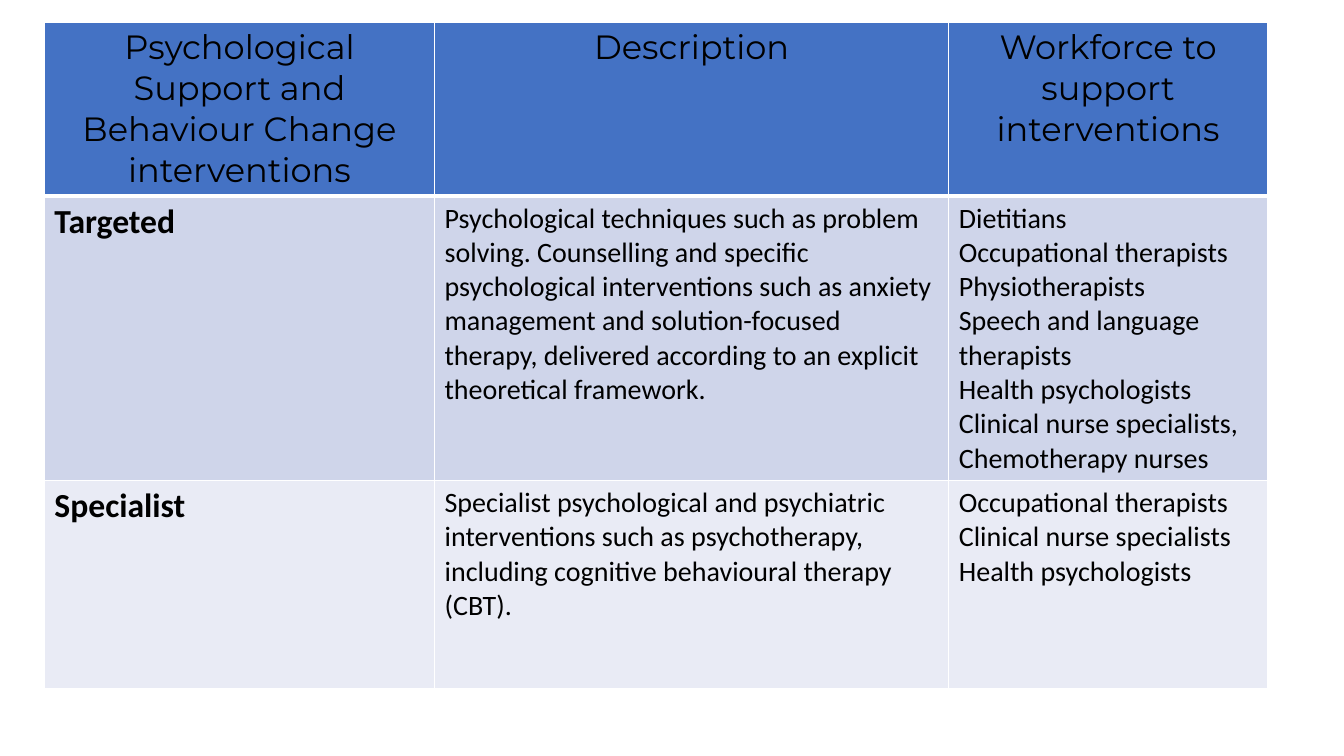
from dataclasses import dataclass

from lxml import etree
from pptx import Presentation
from pptx import util as u
from pptx.dml import color
from pptx.enum import text
from pptx.oxml import ns

PX = 9144
BLACK, WHITE = "000000", "FFFFFF"


@dataclass(frozen=True)
class Style:
    font: str
    size: int
    bold: bool = False
    align: text.PP_ALIGN = text.PP_ALIGN.LEFT


@dataclass(frozen=True)
class Row:
    height: int
    fill: str
    base: int
    styles: tuple[Style, ...]
    cells: tuple[tuple[str, ...], ...]


HEAD = Style("Montserrat", 24, align=text.PP_ALIGN.CENTER)
LEVEL = Style("Calibri", 24, bold=True)
BODY = Style("Calibri", 20)
ENTRY = (LEVEL, BODY, BODY)

WIDTHS = (387, 510, 316)
ROWS = (
    Row(172, "4472C4", 3, (HEAD,) * 3, (
        ("Psychological Support and Behaviour Change interventions",),
        ("Description",),
        ("Workforce to support interventions",),
    )),
    Row(282, "CFD5EA", 1, ENTRY, (
        ("Targeted",),
        ("Psychological techniques such as problem solving. Counselling and "
         "specific psychological interventions such as anxiety management and "
         "solution-focused therapy, delivered according to an explicit "
         "theoretical framework.",),
        ("Dietitians", "Occupational therapists", "Physiotherapists",
         "Speech and language therapists", "Health psychologists",
         "Clinical nurse specialists, Chemotherapy nurses"),
    )),
    Row(206, "E9EBF5", 1, ENTRY, (
        ("Specialist",),
        ("Specialist psychological and psychiatric interventions such as "
         "psychotherapy, including cognitive behavioural therapy (CBT).",),
        ("Occupational therapists", "Clinical nurse specialists",
         "Health psychologists"),
    )),
)


def px(count: int) -> u.Emu:
    return u.Emu(count * PX)


def rgb(code: str) -> color.RGBColor:
    return color.RGBColor.from_string(code)


def edge(cell, base: int) -> None:
    props = cell._tc.get_or_add_tcPr()
    for side, width in (("L", 1), ("R", 1), ("T", 1), ("B", base)):
        line = etree.SubElement(props, ns.qn(f"a:ln{side}"), w=str(u.Pt(width)))
        fill = etree.SubElement(line, ns.qn("a:solidFill"))
        etree.SubElement(fill, ns.qn("a:srgbClr"), val=WHITE)


def write(cell, lines: tuple[str, ...], style: Style) -> None:
    frame = cell.text_frame
    for index, words in enumerate(lines):
        para = frame.add_paragraph() if index else frame.paragraphs[0]
        para.alignment = style.align
        run = para.add_run()
        run.text = words
        run.font.name = style.font
        run.font.size = u.Pt(style.size)
        run.font.bold = style.bold
        run.font.color.rgb = rgb(BLACK)


def draw(slide) -> None:
    high = sum(row.height for row in ROWS)
    frame = slide.shapes.add_table(len(ROWS), len(WIDTHS), px(44), px(22),
                                   px(sum(WIDTHS)), px(high))
    table = frame.table
    for column, width in zip(table.columns, WIDTHS):
        column.width = px(width)
    for line, row in zip(table.rows, ROWS):
        line.height = px(row.height)
        for cell, lines, style in zip(line.cells, row.cells, row.styles):
            edge(cell, row.base)
            cell.fill.solid()
            cell.fill.fore_color.rgb = rgb(row.fill)
            write(cell, lines, style)


def main() -> None:
    deck = Presentation()
    deck.slide_width, deck.slide_height = px(1333), px(750)
    draw(deck.slides.add_slide(deck.slide_layouts[6]))
    deck.save("out.pptx")


if __name__ == "__main__":
    main()
